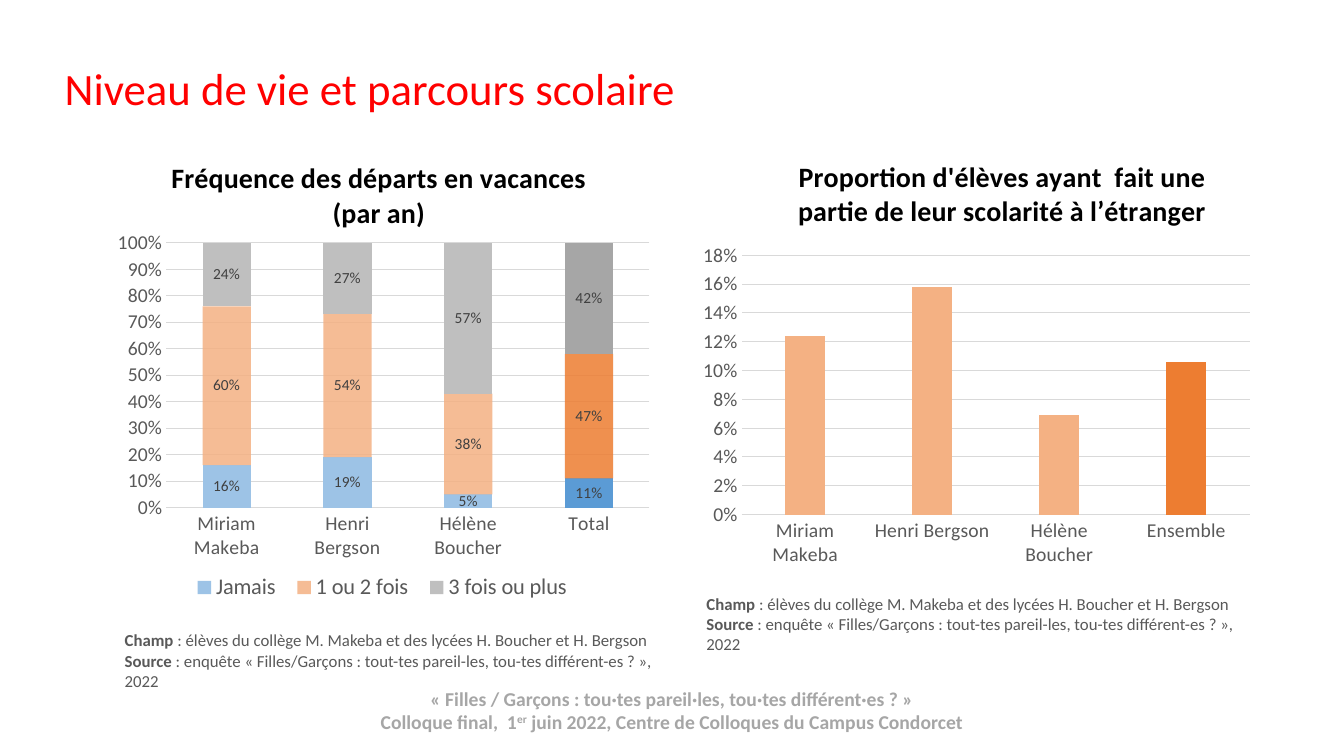
from lxml.etree import SubElement
from pptx import Presentation
from pptx.chart.data import CategoryChartData
from pptx.dml.color import RGBColor
from pptx.enum.chart import XL_CHART_TYPE, XL_LEGEND_POSITION, XL_TICK_MARK
from pptx.enum.text import MSO_ANCHOR, PP_ALIGN
from pptx.oxml import parse_xml
from pptx.oxml.ns import nsdecls, qn
from pptx.util import Pt

FONT = "Calibri"
GREY = "595959"
GRID = "D9D9D9"
SCHOOLS = ["Miriam Makeba", "Henri Bergson", "Hélène Boucher"]


def style(font, size, color, bold=False):
    font.name, font.size, font.bold = FONT, Pt(size), bold
    font.color.rgb = RGBColor.from_string(color)


def set_layout(element, index, **parts):
    """Place a chart part by fractions of the chart's size."""
    for old in element.findall(qn("c:layout")):
        element.remove(old)
    target = '<c:layoutTarget val="inner"/>' if element.tag == qn("c:plotArea") else ""
    modes = "".join(f'<c:{key}Mode val="edge"/>' for key in parts if key in "xy")
    sizes = "".join(f'<c:{key} val="{value}"/>' for key, value in parts.items())
    element.insert(index, parse_xml(
        f'<c:layout {nsdecls("c")}><c:manualLayout>{target}{modes}{sizes}'
        '</c:manualLayout></c:layout>'))


presentation = Presentation()
presentation.slide_width, presentation.slide_height = Pt(960), Pt(540)
slide = presentation.slides.add_slide(presentation.slide_layouts[5])

# Title
heading = slide.shapes.title
heading.left, heading.top, heading.width, heading.height = Pt(39), Pt(13), Pt(828), Pt(104)
heading.text_frame.text = "Niveau de vie et parcours scolaire"
heading.text_frame.vertical_anchor = MSO_ANCHOR.MIDDLE
heading.text_frame.paragraphs[0].alignment = PP_ALIGN.LEFT
heading.text_frame.paragraphs[0].line_spacing = 0.9
style(heading.text_frame.paragraphs[0].runs[0].font, 32, "FF0000")

# Charts: each series is name, values, school colour, total colour
charts = [
    dict(kind=XL_CHART_TYPE.COLUMN_STACKED, box=(66, 102, 406, 357),
         title="Fréquence des départs en vacances (par an)",
         title_at=dict(x=0.13, y=0.02), total="Total", top=1, step=0.1, gap=150, overlap=100,
         plot=dict(x=0.13, y=0.2, w=0.85, h=0.53),
         series=[("Jamais", (0.16, 0.19, 0.05, 0.11), "9DC3E6", "5B9BD5"),
                 ("1 ou 2 fois", (0.6, 0.54, 0.38, 0.47), "F4B183", "ED7D31"),
                 ("3 fois ou plus", (0.24, 0.27, 0.57, 0.42), "BFBFBF", "A6A6A6")]),
    dict(kind=XL_CHART_TYPE.COLUMN_CLUSTERED, box=(493, 102, 408, 309),
         title="Proportion d'élèves ayant  fait une partie de leur scolarité à l’étranger",
         title_at=dict(x=0.18, y=0.02), total="Ensemble", top=0.18, step=0.02, gap=219, overlap=-27,
         plot=dict(x=0.09, y=0.26, w=0.89, h=0.6),
         series=[("Proportion", (0.124, 0.158, 0.069, 0.106), "F4B183", "ED7D31")]),
]
for item in charts:
    data = CategoryChartData(number_format="0%")
    data.categories = SCHOOLS + [item["total"]]
    for name, values, *_ in item["series"]:
        data.add_series(name, values)
    chart = slide.shapes.add_chart(item["kind"], *map(Pt, item["box"]), data).chart
    style(chart.font, 10, "000000")

    # Chart title and plot area
    chart.has_title = True
    chart.chart_title.text_frame.text = item["title"]
    style(chart.chart_title.text_frame.paragraphs[0].runs[0].font, 20, "000000", True)
    chart.chart_title.include_in_layout = False
    set_layout(chart.chart_title._element, 1, **item["title_at"])
    set_layout(chart._chartSpace.chart.plotArea, 0, **item["plot"])

    # Axes
    for axis in (chart.category_axis, chart.value_axis):
        axis.major_tick_mark = axis.minor_tick_mark = XL_TICK_MARK.NONE
        style(axis.tick_labels.font, 14, GREY)
    chart.value_axis.minimum_scale, chart.value_axis.maximum_scale = 0, item["top"]
    chart.value_axis.major_unit = item["step"]
    chart.value_axis.tick_labels.number_format = "0%"
    chart.value_axis.tick_labels.number_format_is_linked = False
    chart.value_axis.format.line.fill.background()
    for rule in (chart.category_axis, chart.value_axis.major_gridlines):
        rule.format.line.color.rgb = RGBColor.from_string(GRID)
        rule.format.line.width = Pt(0.75)

    # Columns, with a stronger colour for the total
    plot = chart.plots[0]
    plot.gap_width, plot.overlap, plot.vary_by_categories = item["gap"], item["overlap"], False
    stacked = len(item["series"]) > 1
    for series, (name, _, school_color, total_color) in zip(plot.series, item["series"]):
        series.invert_if_negative = False
        for part, color in ((series, school_color), (series.points[3], total_color)):
            part.format.fill.solid()
            part.format.fill.fore_color.rgb = RGBColor.from_string(color)
        if name == "1 ou 2 fois":
            for fill_color in series._element.iter(qn("a:srgbClr")):
                SubElement(fill_color, qn("a:alpha"), val="85000")
        if stacked:
            labels = series.data_labels
            labels.show_value = True
            labels.number_format, labels.number_format_is_linked = "0%", False
            style(labels.font, 11, "404040")

    # Legend
    chart.has_legend = stacked
    if stacked:
        chart.legend.position = XL_LEGEND_POSITION.BOTTOM
        chart.legend.include_in_layout = False
        style(chart.legend.font, 16, GREY)
        set_layout(chart.legend._element, 1, x=0.16, y=0.86, w=0.7, h=0.06)

# Notes under the charts and event line; each run is text, bold
note = [
    [("Champ", True),
     (" : élèves du collège M. Makeba et des lycées H. Boucher et H. Bergson", False)],
    [("Source ", True),
     (": enquête « Filles/Garçons : tout-tes pareil-les, tou-tes différent-es ? », 2022", False)],
]
event = [
    [("« Filles / Garçons : tou·tes pareil·les, tou·tes différent·es ? »", True)],
    [("Colloque final,  1", True), ("er", True),
     (" juin 2022, Centre de Colloques du Campus Condorcet", True)],
]
for box, lines, size, color, alignment in [
    ((82, 446.5, 404, 51), note, 12, GREY, PP_ALIGN.LEFT),
    ((497.5, 420.5, 404, 51), note, 12, GREY, PP_ALIGN.LEFT),
    ((66, 487, 828, 41), event, 14, "A6A6A6", PP_ALIGN.CENTER),
]:
    frame = slide.shapes.add_textbox(*map(Pt, box)).text_frame
    frame.word_wrap = True
    for number, line in enumerate(lines):
        paragraph = frame.add_paragraph() if number else frame.paragraphs[0]
        paragraph.alignment = alignment
        for text, bold in line:
            run = paragraph.add_run()
            run.text = text
            style(run.font, size, color, bold)
            if text == "er":
                run.font._element.set("baseline", "30000")

presentation.save("out.pptx")
